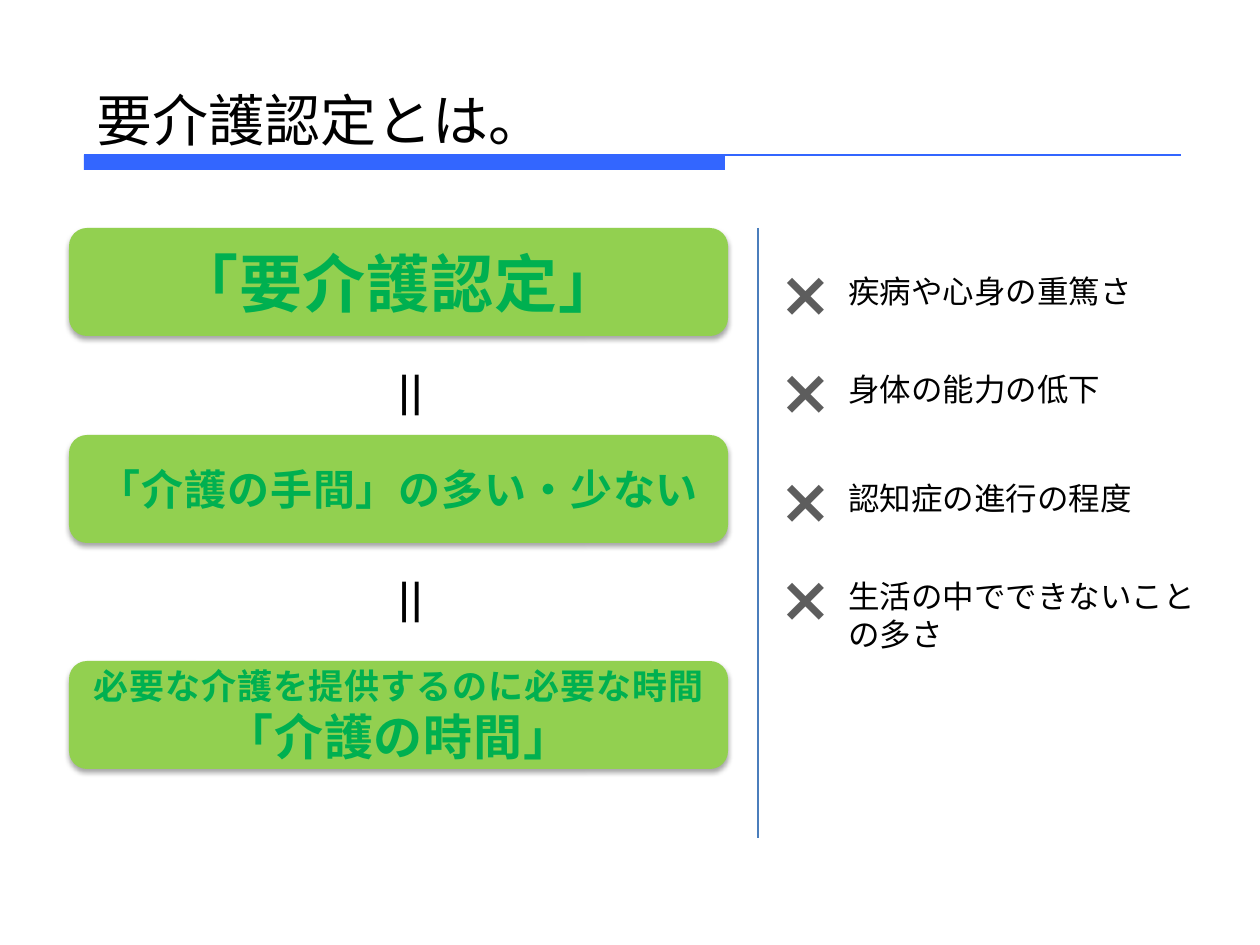
import pptx
import pptx.util
import pptx.dml.color
import pptx.enum.shapes
import pptx.enum.text
import pptx.oxml
import pptx.oxml.ns

PX = 914400 / 126
BLUE, LIME, GREEN, BLACK, GREY = "3366FF", "92D050", "00B050", "000000", "5D5D5D"
JAPANESE = "Noto Sans CJK JP"
LEFT = pptx.enum.text.PP_ALIGN.LEFT
CENTER = pptx.enum.text.PP_ALIGN.CENTER
MIDDLE = pptx.enum.text.MSO_ANCHOR.MIDDLE
BOTTOM = pptx.enum.text.MSO_ANCHOR.BOTTOM
SHAPES = pptx.enum.shapes.MSO_SHAPE
SHADOW = (
    '<a:effectLst %s><a:outerShdw blurRad="40000" dist="23000" dir="5400000" rotWithShape="0">'
    '<a:srgbClr val="000000"><a:alpha val="35000"/></a:srgbClr></a:outerShdw></a:effectLst>'
    % pptx.oxml.ns.nsdecls("a")
)


def px(length):
    return pptx.util.Emu(round(length * PX))


def color(value):
    return pptx.dml.color.RGBColor.from_string(value)


def apply(target, values):
    for name, value in values.items():
        setattr(target, name, value)


def write(para, text, size, ink=BLACK, font="DejaVu Sans", bold=False, east=True, spacing=0, align=LEFT):
    para.alignment = align
    span = para.add_run()
    span.text = text
    apply(span.font, {"size": pptx.util.Pt(size), "name": font, "bold": bold})
    span.font.color.rgb = color(ink)
    properties = span._r.get_or_add_rPr()
    if east:
        xml = '<a:ea %s typeface="%s"/>' % (pptx.oxml.ns.nsdecls("a"), JAPANESE)
        properties.find(pptx.oxml.ns.qn("a:latin")).addnext(pptx.oxml.parse_xml(xml))
    if spacing:
        properties.set("spc", str(spacing))


def add_label(page, box, text, size, vertical=False, **style):
    label = page.shapes.add_textbox(*map(px, box))
    label.text_frame.word_wrap = True
    if vertical:
        label.text_frame._txBody.bodyPr.set("vert", "eaVert")
    write(label.text_frame.paragraphs[0], text, size, **style)


def add_block(page, kind, box, fill):
    block = page.shapes.add_shape(kind, *map(px, box))
    block.shadow.inherit = False
    block.fill.solid()
    block.fill.fore_color.rgb = color(fill)
    block.line.fill.background()
    return block


def add_rule(page, start, end, ink):
    straight = pptx.enum.shapes.MSO_CONNECTOR.STRAIGHT
    rule = page.shapes.add_connector(straight, *map(px, start + end))
    rule.line.color.rgb = color(ink)
    rule.line.width = pptx.util.Pt(0.75)
    rule._element.spPr.append(pptx.oxml.parse_xml("<a:effectLst %s/>" % pptx.oxml.ns.nsdecls("a")))


def add_heading(page, box, text):
    left, top, width, height = box
    bottom = top + height - 3
    add_block(page, SHAPES.RECTANGLE, (left, bottom, 641, 15), BLUE)
    add_rule(page, (left, bottom), (left + 1097, bottom), BLUE)
    title = page.shapes.title
    apply(title, dict(zip(("left", "top", "width", "height"), map(px, box))))
    frame = title.text_frame
    apply(frame, {"vertical_anchor": BOTTOM, "word_wrap": True, "margin_bottom": px(5)})
    write(frame.paragraphs[0], text, 32, font="Calibri")


def add_card(page, box, lines):
    card = add_block(page, SHAPES.ROUNDED_RECTANGLE, box, LIME)
    properties = card._element.spPr
    properties.remove(properties.find(pptx.oxml.ns.qn("a:effectLst")))
    properties.append(pptx.oxml.parse_xml(SHADOW))
    frame = card.text_frame
    apply(frame, {"vertical_anchor": MIDDLE, "word_wrap": True})
    for index, (text, size) in enumerate(lines):
        para = frame.add_paragraph() if index else frame.paragraphs[0]
        write(para, text, size, GREEN, JAPANESE, bold=True, spacing=50, align=CENTER)


def add_definition(page, box, cards):
    left, top, width, height = box
    for offset, lines in cards:
        add_card(page, (left, top + offset, width, height), lines)
    for offset in (127, 334):
        add_label(page, (left + 290, top + offset, 93, 69), "＝", 32, vertical=True)


def add_exclusions(page, box, items):
    left, top, width, height = box
    add_rule(page, (left, top), (left, top + height), "4B7EBC")
    for offset, text in items:
        add_label(page, (left + 9, top + offset, 98, 89), "×", 36, ink=GREY, bold=True, east=False)
        add_label(page, (left + 78, top + offset + 19, width - 78, 50), text, 18)


def main():
    deck = pptx.Presentation()
    apply(deck, {"slide_width": px(1260), "slide_height": px(945)})
    page = deck.slides.add_slide(deck.slide_layouts[5])
    add_heading(page, (84, 0, 1134, 158), "要介護認定とは。")
    add_definition(page, (69, 228, 659, 108), [
        (0, [("「要介護認定」", 36)]),
        (207, [("「介護の手間」の多い・少ない", 24)]),
        (433, [("必要な介護を提供するのに必要な時間", 20), ("「介護の時間」", 28)]),
    ])
    add_exclusions(page, (758, 228, 463, 610), [
        (19, "疾病や心身の重篤さ"),
        (117, "身体の能力の低下"),
        (226, "認知症の進行の程度"),
        (324, "生活の中でできないことの多さ"),
    ])
    deck.save("out.pptx")


if __name__ == "__main__":
    main()
